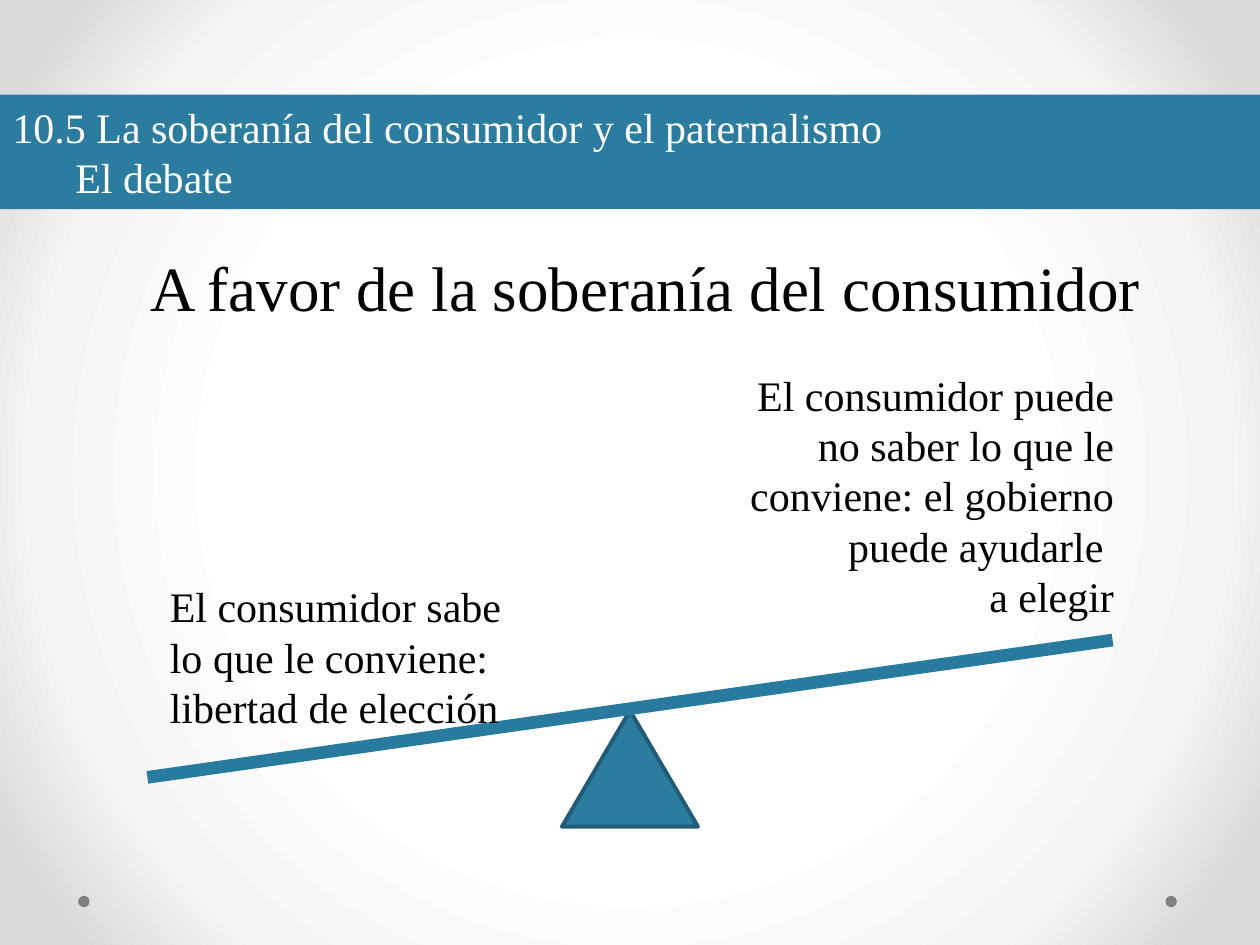
import lxml.etree
import pptx
import pptx.dml.color
import pptx.enum.shapes
import pptx.enum.text
import pptx.oxml
import pptx.oxml.ns
import pptx.util

Inches = pptx.util.Inches
RGBColor = pptx.dml.color.RGBColor
Shape = pptx.enum.shapes.MSO_SHAPE
Align = pptx.enum.text.PP_ALIGN
qn = pptx.oxml.ns.qn

BLUE = RGBColor(0x2C, 0x7C, 0x9F)
DARK_BLUE = RGBColor(0x21, 0x5C, 0x76)
BEAM_BLUE = RGBColor(0x28, 0x7A, 0x9E)
GRAY = RGBColor(0x80, 0x80, 0x80)
BLACK = RGBColor(0, 0, 0)
WHITE = RGBColor(0xFF, 0xFF, 0xFF)
BACKGROUND_STOPS = [(50, WHITE), (76, RGBColor(0xF4, 0xF4, 0xF4)), (92, RGBColor(0xDA, 0xDA, 0xDA))]


def write_text(text_frame, text, size=24, color=BLACK, align=Align.LEFT):
    text_frame.word_wrap = True
    for index, line in enumerate(text.split("\n")):
        paragraph = text_frame.paragraphs[0] if index == 0 else text_frame.add_paragraph()
        paragraph.alignment = align
        run = paragraph.add_run()
        run.text = line
        run.font.name = "Times New Roman"
        run.font.size = pptx.util.Pt(size)
        run.font.color.rgb = color


class SlideBuilder:
    def __init__(self, presentation):
        self.slide = presentation.slides.add_slide(presentation.slide_layouts[6])

    def radial_background(self, stops):
        self.slide.background.fill.gradient()
        gradient = self.slide.element.find(".//" + qn("a:gradFill"))
        for child in list(gradient):
            gradient.remove(child)
        stop_list = lxml.etree.SubElement(gradient, qn("a:gsLst"))
        for position, color in stops:
            stop = lxml.etree.SubElement(stop_list, qn("a:gs"), pos=str(position * 1000))
            lxml.etree.SubElement(stop, qn("a:srgbClr"), val=str(color))
        circle = lxml.etree.SubElement(gradient, qn("a:path"), {"path": "circle"})
        center = dict.fromkeys("ltrb", "50000")
        lxml.etree.SubElement(circle, qn("a:fillToRect"), center)

    def shape(self, kind, left, top, width, height, fill, line=None, line_width=0):
        shape = self.slide.shapes.add_shape(
            kind, Inches(left), Inches(top), Inches(width), Inches(height))
        shape.shadow.inherit = False
        shape.fill.solid()
        shape.fill.fore_color.rgb = fill
        if line is None:
            shape.line.fill.background()
        else:
            shape.line.color.rgb = line
            shape.line.width = pptx.util.Pt(line_width)
        return shape

    def text(self, left, top, width, height, text, **text_format):
        box = self.slide.shapes.add_textbox(
            Inches(left), Inches(top), Inches(width), Inches(height))
        write_text(box.text_frame, text, **text_format)

    def line(self, start, end, color, width):
        connector = self.slide.shapes.add_connector(
            pptx.enum.shapes.MSO_CONNECTOR.STRAIGHT,
            *(Inches(value) for value in (*start, *end)))
        connector.line.color.rgb = color
        connector.line.width = pptx.util.Pt(width)
        lxml.etree.SubElement(connector.element.spPr, qn("a:effectLst"))


def main():
    presentation = pptx.Presentation()
    presentation.slide_width = Inches(10)
    presentation.slide_height = Inches(7.5)
    builder = SlideBuilder(presentation)
    builder.radial_background(BACKGROUND_STOPS)

    for dot_left in (9.25, 0.62):
        builder.shape(Shape.OVAL, dot_left, 7.11, 0.09, 0.09, GRAY)

    title_band = builder.shape(Shape.RECTANGLE, 0, 0.75, 10, 0.91, BLUE)
    write_text(title_band.text_frame,
               "10.5 La soberanía del consumidor y el paternalismo\n\tEl debate", color=WHITE)
    builder.text(0.83, 1.92, 8.58, 0.71, "A favor de la soberanía del consumidor",
                 size=36, align=Align.CENTER)

    builder.shape(Shape.ISOSCELES_TRIANGLE, 4.46, 5.64, 1.08, 0.92, BLUE, DARK_BLUE, 2.25)
    builder.line((1.17, 6.17), (8.83, 5.08), BEAM_BLUE, 7.25)

    builder.text(5.83, 2.88, 3.11, 2.12,
                 "El consumidor puede no saber lo que le conviene: "
                 "el gobierno puede ayudarle \na elegir", align=Align.RIGHT)
    builder.text(1.25, 4.56, 2.83, 1.31,
                 "El consumidor sabe lo que le conviene: libertad de elección")
    presentation.save("out.pptx")


if __name__ == "__main__":
    main()
